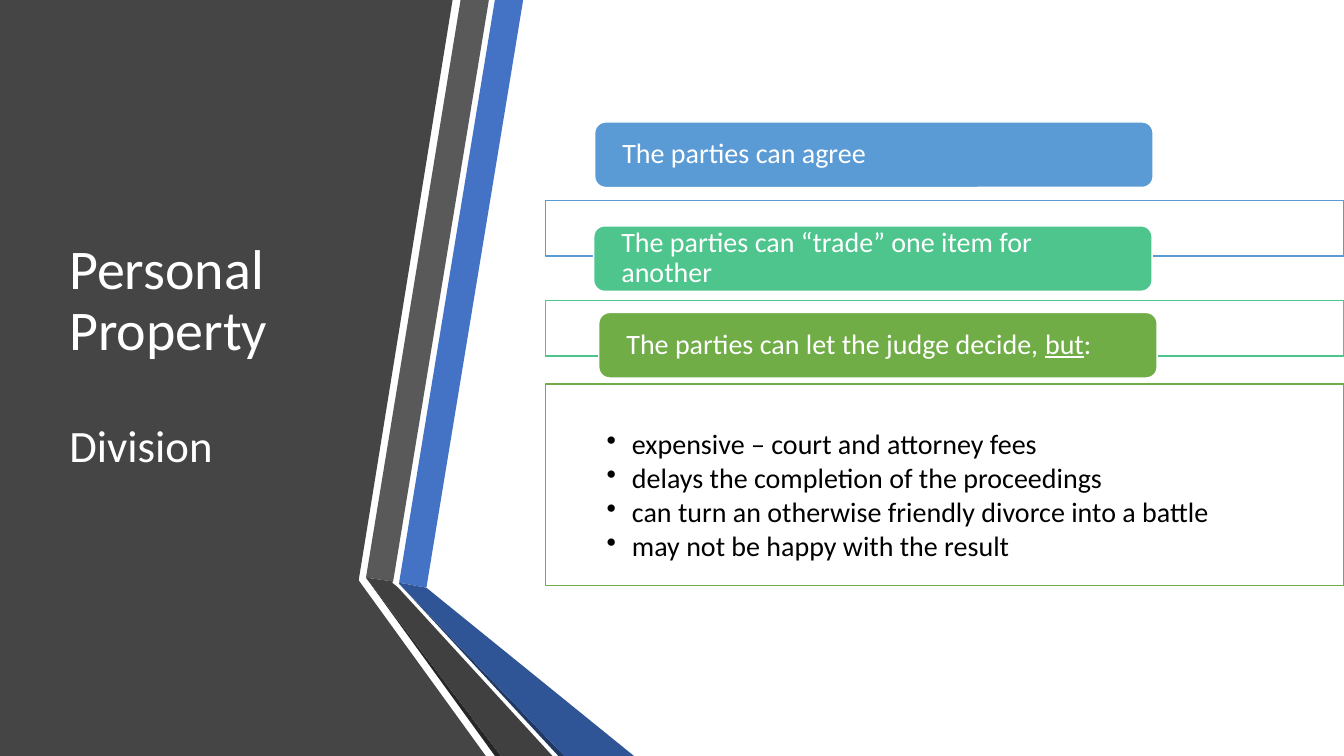
"""Build the slide on dividing personal property."""
import pptx
import pptx.dml.color
import pptx.enum.shapes
import pptx.enum.text
import pptx.oxml.ns
import pptx.util
from lxml import etree

Pt = pptx.util.Pt
RGBColor = pptx.dml.color.RGBColor
Shape = pptx.enum.shapes.MSO_SHAPE
Anchor = pptx.enum.text.MSO_ANCHOR
qn = pptx.oxml.ns.qn

WHITE = RGBColor(0xFF, 0xFF, 0xFF)
BLACK = RGBColor(0x00, 0x00, 0x00)
CHARCOAL = RGBColor(0x45, 0x45, 0x45)
BLUE = RGBColor(0x44, 0x72, 0xC4)
GREY = RGBColor(0x59, 0x59, 0x59)
NEAR_BLACK = RGBColor(0x26, 0x26, 0x26)
NAVY = RGBColor(0x20, 0x38, 0x64)
DARK_BLUE = RGBColor(0x2F, 0x55, 0x97)
DARK_GREY = RGBColor(0x40, 0x40, 0x40)
SKY = RGBColor(0x5B, 0x9B, 0xD5)
MINT = RGBColor(0x4D, 0xC5, 0x8D)
GREEN = RGBColor(0x70, 0xAD, 0x47)


def add_box(preset, bounds, fill, line):
    box = slide.shapes.add_shape(preset, *map(Pt, bounds))
    box.shadow.inherit = False
    box.fill.solid()
    box.fill.fore_color.rgb = fill
    box.line.color.rgb = line
    box.line.width = Pt(1)
    return box


def write(paragraph, text, size, color, **font_format):
    paragraph.alignment = pptx.enum.text.PP_ALIGN.LEFT
    paragraph.line_spacing = 0.9
    run = paragraph.add_run()
    run.text = text
    run.font.color.rgb = color
    for name, value in {"name": "Calibri", "size": Pt(size), **font_format}.items():
        setattr(run.font, name, value)


deck = pptx.Presentation()
deck.slide_width, deck.slide_height = Pt(960), Pt(540)
slide = deck.slides.add_slide(deck.slide_layouts[6])

ribbons = [
    (CHARCOAL, [(0, 0), (323.3, 0), (256.3, 414), (256.3, 414.7), (347, 540), (0, 540)]),
    (BLUE, [(285.1, 416.2), (304.6, 419.8), (373.7, 0), (353.5, 0)]),
    (GREY, [(349.2, 0), (329, 0), (261.4, 412.6), (280.8, 415.4)]),
    (NEAR_BLACK, [(261.4, 412.6), (353.5, 540), (357.8, 540)]),
    (NAVY, [(285.1, 416.9), (398.9, 540), (403.2, 540)]),
    (DARK_BLUE, [(285.1, 416.2), (285.1, 416.9), (403.2, 540), (452.9, 540), (304.6, 419.8)]),
    (DARK_GREY, [(394.6, 540), (284.4, 419.8), (280.1, 416.2), (280.8, 415.4),
                 (261.4, 412.6), (357.8, 540)]),
]
for color, corners in ribbons:
    points = [(Pt(x), Pt(y)) for x, y in corners]
    outline = slide.shapes.build_freeform(*points[0])
    outline.add_line_segments(points[1:], close=True)
    ribbon = outline.convert_to_shape()
    ribbon.shadow.inherit = False
    ribbon.fill.solid()
    ribbon.fill.fore_color.rgb = color
    ribbon.line.fill.background()

title = slide.shapes.add_textbox(Pt(42.5), Pt(54), Pt(219), Pt(402)).text_frame
title.word_wrap = True
title.vertical_anchor = Anchor.MIDDLE
write(title.paragraphs[0], "Personal Property", 40, WHITE)
division = title.add_paragraph()
division.space_before = Pt(44)
write(division, "Division", 32, WHITE)

drawbacks = [
    "expensive – court and attorney fees",
    "delays the completion of the proceedings",
    "can turn an otherwise friendly divorce into a battle",
    "may not be happy with the result",
]
options = [
    (SKY, 143.3, 39.6, 424.8, 87.1, [("The parties can agree", False)], []),
    (MINT, 214.6, 39.6, 424.1, 161.3,
     [("The parties can “trade” one item for another", False)], []),
    (GREEN, 274.3, 144, 427.7, 223.2,
     [("The parties can let the judge decide, ", False), ("but", True), (":", False)],
     drawbacks),
]
panel_format = {"margin_left": Pt(43.9), "margin_top": Pt(33.1), "margin_right": Pt(43.9),
                "margin_bottom": Pt(11.5), "vertical_anchor": Anchor.TOP, "word_wrap": True}
label_format = {"margin_left": Pt(17.5), "margin_top": 0, "margin_right": Pt(17.5),
                "margin_bottom": 0, "vertical_anchor": Anchor.MIDDLE, "word_wrap": True}

for color, panel_top, panel_height, label_left, label_top, phrases, bullets in options:
    panel = add_box(Shape.RECTANGLE, (389.5, panel_top, 570.5, panel_height), WHITE, color)
    white_fill = panel.fill._xPr.find(qn("a:solidFill"))[0]
    etree.SubElement(white_fill, qn("a:alpha"), val="90000")
    label = add_box(Shape.ROUNDED_RECTANGLE, (label_left, label_top, 398.9, 46.8), color, WHITE)

    for frame, frame_format in ((panel.text_frame, panel_format),
                                (label.text_frame, label_format)):
        for name, value in frame_format.items():
            setattr(frame, name, value)

    for phrase, underlined in phrases:
        write(label.text_frame.paragraphs[0], phrase, 20, WHITE, underline=underlined)

    for number, drawback in enumerate(bullets):
        frame = panel.text_frame
        item = frame.add_paragraph() if number else frame.paragraphs[0]
        write(item, drawback, 20, BLACK)
        item.space_after = Pt(2.6)
        properties = item._p.get_or_add_pPr()
        properties.set("marL", str(Pt(18)))
        properties.set("indent", str(-Pt(18)))
        etree.SubElement(properties, qn("a:buChar"), char="•")

deck.save("out.pptx")
